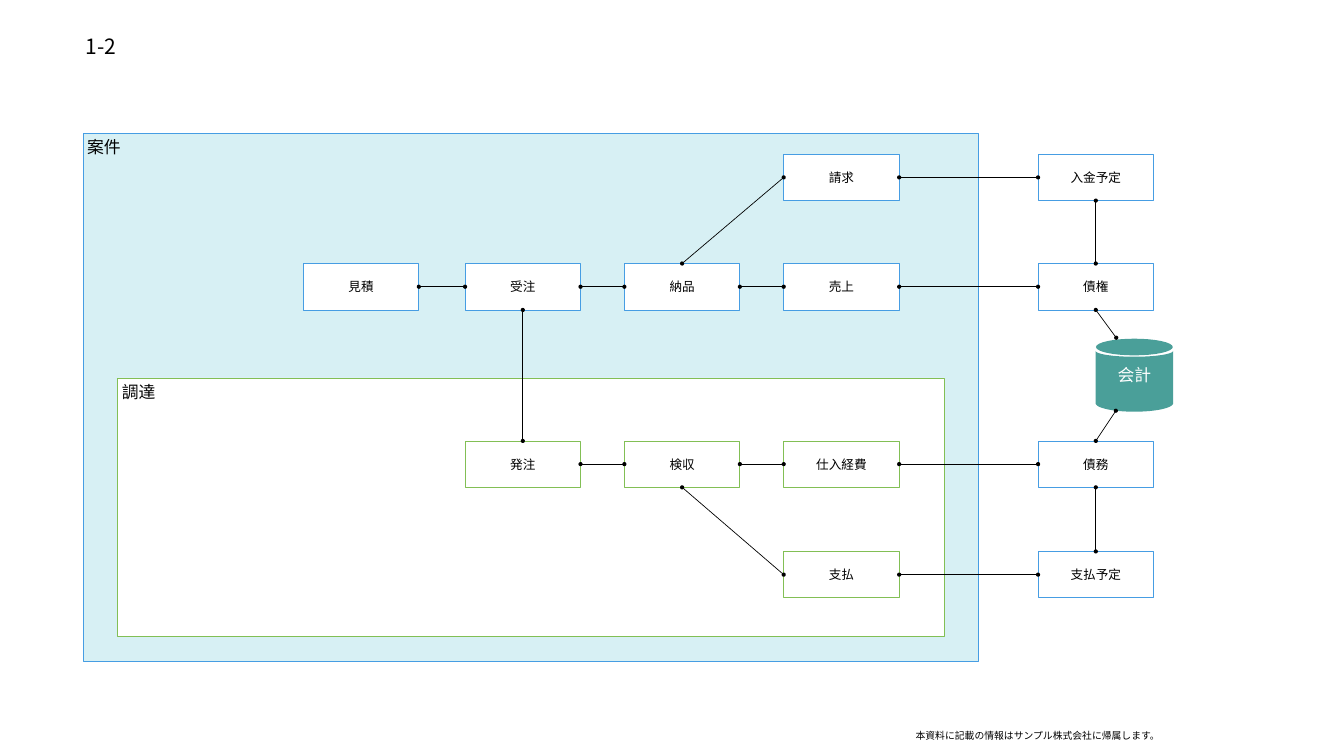
from math import cos, pi, sin

from lxml import etree
from pptx import Presentation
from pptx.dml.color import RGBColor
from pptx.enum.shapes import MSO_CONNECTOR, MSO_SHAPE
from pptx.enum.text import MSO_ANCHOR, MSO_AUTO_SIZE, PP_ALIGN
from pptx.oxml.ns import qn
from pptx.util import Cm, Pt

RECTANGLE = MSO_SHAPE.RECTANGLE
STRAIGHT = MSO_CONNECTOR.STRAIGHT
TOP, MIDDLE = MSO_ANCHOR.TOP, MSO_ANCHOR.MIDDLE
LEFT, CENTER = PP_ALIGN.LEFT, PP_ALIGN.CENTER
NO_AUTOFIT = MSO_AUTO_SIZE.NONE
SIDE_TOP, SIDE_LEFT, SIDE_BOTTOM, SIDE_RIGHT = range(4)

FONT = "Noto Sans CJK JP"
COLORS = {"black": "000000", "white": "FFFFFF", "project": "D7F0F4",
          "blue": "469DE3", "green": "82BF55", "teal": "4A9F99"}

# Process grid, in centimetres
BOX_WIDTH, BOX_HEIGHT = 5.82, 2.34
ORDER_X, STEP_X = 23.44, 8.03
COLUMNS = [15.29] + [ORDER_X + STEP_X * i for i in range(3)] + [52.32]
ROWS = [7.77, 13.28, 22.22, 27.79]

STEPS = [  # name, column, row, outline
    ("請求", 3, 0, "blue"), ("入金予定", 4, 0, "blue"),
    ("見積", 0, 1, "blue"), ("受注", 1, 1, "blue"), ("納品", 2, 1, "blue"),
    ("売上", 3, 1, "blue"), ("債権", 4, 1, "blue"),
    ("発注", 1, 2, "green"), ("検収", 2, 2, "green"),
    ("仕入経費", 3, 2, "green"), ("債務", 4, 2, "blue"),
    ("支払", 3, 3, "green"), ("支払予定", 4, 3, "blue"),
]
ACROSS = (SIDE_RIGHT, SIDE_LEFT)
DOWN = (SIDE_BOTTOM, SIDE_TOP)
FLOWS = [  # from, to, sides joined
    ("見積", "受注", ACROSS), ("受注", "納品", ACROSS),
    ("納品", "売上", ACROSS), ("売上", "債権", ACROSS),
    ("請求", "入金予定", ACROSS), ("発注", "検収", ACROSS),
    ("検収", "仕入経費", ACROSS), ("仕入経費", "債務", ACROSS),
    ("支払", "支払予定", ACROSS), ("受注", "発注", DOWN),
    ("入金予定", "債権", DOWN), ("債務", "支払予定", DOWN),
    ("納品", "請求", (SIDE_TOP, SIDE_LEFT)),
    ("検収", "支払", (SIDE_BOTTOM, SIDE_LEFT)),
]


def color(name):
    return RGBColor.from_string(COLORS[name])


def arc(center_x, center_y, radius_x, radius_y, start, end, steps=32):
    """Points in EMU along an ellipse, angles in radians, y pointing down."""
    angles = [start + (end - start) * i / steps for i in range(steps + 1)]
    return [(Cm(center_x + radius_x * cos(a)), Cm(center_y + radius_y * sin(a)))
            for a in angles]


class Diagram:
    """Holds the slide being drawn and the shared style."""

    def __init__(self, slide):
        self.slide = slide
        self.shapes = slide.shapes

    def set_text(self, shape, text, size, ink="black", align=LEFT,
                 anchor=MIDDLE, margin=0.2, wrap=True):
        frame = shape.text_frame
        frame.text = text
        frame.word_wrap = wrap
        frame.auto_size = NO_AUTOFIT
        frame.vertical_anchor = anchor
        frame.margin_left = frame.margin_right = Cm(margin)
        frame.margin_top = frame.margin_bottom = Cm(margin)
        para = frame.paragraphs[0]
        para.alignment = align
        para.font.size = Pt(size)
        para.font.name = FONT
        para.font.color.rgb = color(ink)
        properties = para._p.xpath("a:pPr/a:defRPr")[0]
        etree.SubElement(properties, qn("a:ea"), typeface=FONT)

    def title(self, text, left, top, width, height):
        title = self.shapes.title
        title.left, title.top = Cm(left), Cm(top)
        title.width, title.height = Cm(width), Cm(height)
        self.set_text(title, text, 30, margin=0.15, wrap=False)

    def note(self, text, left, top, width, height):
        box = self.shapes.add_textbox(Cm(left), Cm(top), Cm(width), Cm(height))
        self.set_text(box, text, 14)

    def rectangle(self, left, top, width, height, fill, outline):
        box = self.shapes.add_shape(RECTANGLE, Cm(left), Cm(top),
                                    Cm(width), Cm(height))
        box.shadow.inherit = False
        box.fill.solid()
        box.fill.fore_color.rgb = color(fill)
        box.line.color.rgb = color(outline)
        box.line.width = Pt(1)
        return box

    def area(self, text, left, top, width, height, fill, outline):
        box = self.rectangle(left, top, width, height, fill, outline)
        self.set_text(box, text, 24, anchor=TOP)

    def step(self, text, column, row, outline):
        box = self.rectangle(COLUMNS[column], ROWS[row], BOX_WIDTH, BOX_HEIGHT,
                             "white", outline)
        self.set_text(box, text, 18, align=CENTER)
        return box

    def database(self, text, left, top, width, height):
        """Cylinder whose lid is set off from the body by a thin gap."""
        radius = width / 2
        middle = left + radius
        lid = arc(middle, top + 0.42, radius - 0.02, 0.42, 0, 2 * pi)
        body = (arc(middle, top + 0.61, radius, 0.3, pi, 0)
                + arc(middle, top + height - 0.43, radius, 0.43, 0, pi))
        builder = self.shapes.build_freeform(*lid[0])
        builder.add_line_segments(lid[1:], close=True)
        builder.move_to(*body[0])
        builder.add_line_segments(body[1:], close=True)
        cylinder = builder.convert_to_shape()
        cylinder.shadow.inherit = False
        cylinder.fill.solid()
        cylinder.fill.fore_color.rgb = color("teal")
        cylinder.line.fill.background()
        self.set_text(cylinder, text, 24, ink="white", align=CENTER)

    def link(self, start, start_side, end=None, end_side=None, point=(0, 0)):
        """Line with round ends from a box side to another side or a point."""
        x, y = map(Cm, point)
        line = self.shapes.add_connector(STRAIGHT, x, y, x, y)
        line.begin_connect(start, start_side)
        if end is not None:
            line.end_connect(end, end_side)
        line.line.color.rgb = color("black")
        line.line.width = Pt(1)
        properties = line._element.spPr
        outline = properties.find(qn("a:ln"))
        for tag in ("a:headEnd", "a:tailEnd"):
            etree.SubElement(outline, qn(tag), type="oval")
        etree.SubElement(properties, qn("a:effectLst"))


def main():
    deck = Presentation()
    deck.slide_width, deck.slide_height = Cm(67.74), Cm(38.1)
    diagram = Diagram(deck.slides.add_slide(deck.slide_layouts[5]))

    diagram.title("1-2", 4.17, 1.65, 2.26, 1.35)
    diagram.note("本資料に記載の情報はサンプル株式会社に帰属します。",
                 45.95, 36.63, 12.73, 0.89)
    diagram.area("案件", 4.19, 6.71, 45.14, 26.64, "project", "blue")
    diagram.area("調達", 5.94, 19.05, 41.68, 13, "white", "green")

    boxes = {step[0]: diagram.step(*step) for step in STEPS}
    diagram.database("会計", 55.22, 17.07, 3.91, 3.68)

    for start, end, (start_side, end_side) in FLOWS:
        diagram.link(boxes[start], start_side, boxes[end], end_side)
    diagram.link(boxes["債権"], SIDE_BOTTOM, point=(56.26, 17.02))
    diagram.link(boxes["債務"], SIDE_TOP, point=(56.24, 20.7))

    deck.save("out.pptx")


if __name__ == "__main__":
    main()
